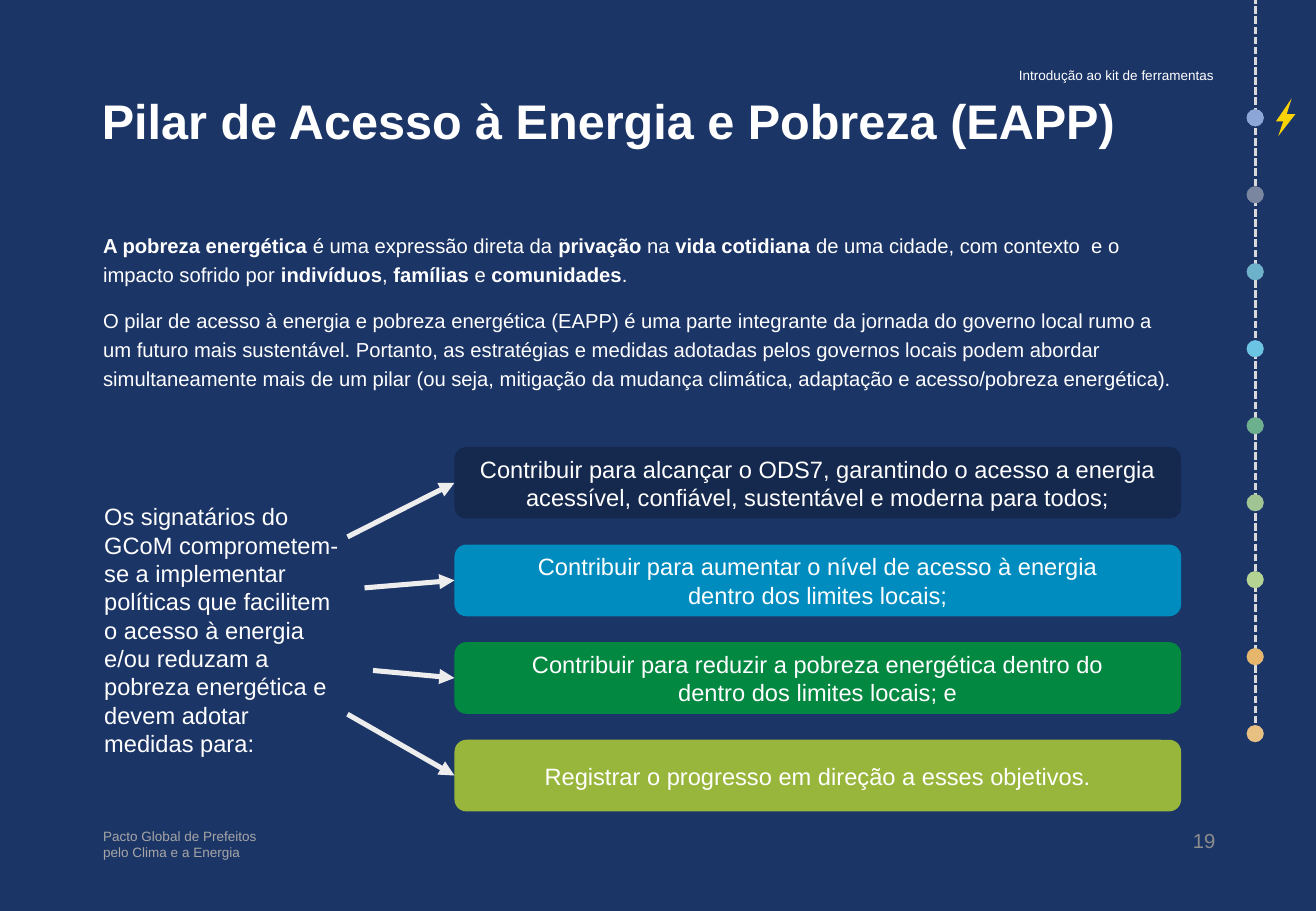
from copy import deepcopy

from pptx import Presentation
from pptx.dml.color import RGBColor
from pptx.enum.dml import MSO_LINE_DASH_STYLE as Dash
from pptx.enum.shapes import MSO_CONNECTOR_TYPE as Connector, MSO_SHAPE as Shape
from pptx.enum.text import MSO_VERTICAL_ANCHOR as Anchor, PP_PARAGRAPH_ALIGNMENT as Align
from pptx.oxml.xmlchemy import OxmlElement
from pptx.util import Inches, Pt

NAVY = RGBColor(0x1C, 0x35, 0x67)
DARK_NAVY = RGBColor(0x15, 0x28, 0x4D)
BLUE = RGBColor(0x00, 0x8C, 0xBE)
GREEN = RGBColor(0x03, 0x88, 0x42)
OLIVE = RGBColor(0x99, 0xB6, 0x3C)
WHITE = RGBColor(0xFF, 0xFF, 0xFF)
ARROW_GRAY = RGBColor(0xED, 0xED, 0xED)
TRACK_GRAY = RGBColor(0xD9, 0xD9, 0xD9)
FOOTER_GRAY = RGBColor(0xA6, 0xA6, 0xA6)
NUMBER_GRAY = RGBColor(0x8C, 0x8C, 0x8C)
YELLOW = RGBColor(0xFA, 0xD3, 0x07)
PALE_BLUE = RGBColor(0xC3, 0xD2, 0xEF)
MID_BLUE = RGBColor(0x4C, 0x78, 0xCE)
SKY = RGBColor(0x00, 0xB0, 0xF0)
LEAF = RGBColor(0x6A, 0xB2, 0x4D)
LIME = RGBColor(0x92, 0xD0, 0x50)
ORANGE = RGBColor(0xF1, 0x95, 0x00)
AMBER = RGBColor(0xF8, 0xA9, 0x2A)

DOT_COLORS = [MID_BLUE, NAVY, BLUE, SKY, GREEN, LEAF, LIME, ORANGE, AMBER]
DOT_TOP, DOT_SIZE = 0.9, 0.14
DOT_STEP = (5.97 - DOT_TOP) / (len(DOT_COLORS) - 1)

INTRO = [
    "*A pobreza energética *é uma expressão direta da *privação *na *vida cotidiana *"
    "de uma cidade, com contexto  e o impacto sofrido por *indivíduos*, *famílias *e "
    "*comunidades*.",
    "O pilar de acesso à energia e pobreza energética (EAPP) é uma parte integrante da "
    "jornada do governo local rumo a um futuro mais sustentável. Portanto, as estratégias "
    "e medidas adotadas pelos governos locais podem abordar simultaneamente mais de um "
    "pilar (ou seja, mitigação da mudança climática, adaptação e acesso/pobreza energética).",
]
COMMITMENT = (
    "Os signatários do GCoM comprometem-se a implementar políticas que facilitem o acesso "
    "à energia e/ou reduzam a pobreza energética e devem adotar medidas para:"
)
MEASURES = [
    (DARK_NAVY, (2.86, 4.42), "Contribuir para alcançar o ODS7, garantindo o acesso a energia "
     "acessível, confiável, sustentável e moderna para todos;"),
    (BLUE, (3, 4.84), "Contribuir para aumentar o nível de acesso à energia\n"
     "dentro dos limites locais;"),
    (GREEN, (3.07, 5.52), "Contribuir para reduzir a pobreza energética dentro do\n"
     "dentro dos limites locais; e"),
    (OLIVE, (2.86, 5.88), "Registrar o progresso em direção a esses objetivos."),
]
BAR_LEFT, BAR_TOP, BAR_WIDTH, BAR_HEIGHT = 3.74, 3.68, 5.98, 0.59
BAR_STEP = (6.09 - BAR_TOP) / (len(MEASURES) - 1)

BOLT = [
    [(10.57, 1), (10.5, 1), (10.63, 0.81), (10.58, 0.97)],
    [(10.58, 0.94), (10.66, 0.94), (10.52, 1.12), (10.57, 0.97)],
]


def apply(target, values):
    for name, value in values.items():
        setattr(target, name, value)


class Painter:
    font_name = "Arial"

    def __init__(self, page):
        self.page = page

    def fill_text(self, box, paragraphs, size, color=WHITE, bold=False, anchor=Anchor.TOP,
                  **format):
        frame = box.text_frame
        apply(frame, {"word_wrap": True, "vertical_anchor": anchor})
        for index, text in enumerate(paragraphs):
            para = frame.add_paragraph() if index else frame.paragraphs[0]
            apply(para, {"alignment": Align.LEFT, **format})
            if index:
                para.space_before = Pt(10)
            for part, piece in enumerate(text.split("*")):
                if piece:
                    self.add_spans(para, piece, size, color, bold or part % 2 == 1)

    def add_spans(self, para, piece, size, color, bold):
        for number, line in enumerate(piece.split("\n")):
            if number:
                para.add_line_break()
                para._p[-1].append(deepcopy(span._r.rPr))
            span = para.add_run()
            span.text = line
            apply(span.font, {"name": self.font_name, "size": Pt(size), "bold": bold})
            span.font.color.rgb = color

    def text(self, place, paragraphs, size, **format):
        box = self.page.shapes.add_textbox(*map(Inches, place))
        self.fill_text(box, paragraphs, size, **format)

    def paint(self, shape, fill):
        shape.shadow.inherit = False
        shape.line.fill.background()
        if fill is None:
            shape.fill.background()
        else:
            shape.fill.solid()
            shape.fill.fore_color.rgb = fill

    def shape(self, kind, place, fill=None, opacity=None):
        shape = self.page.shapes.add_shape(kind, *map(Inches, place))
        self.paint(shape, fill)
        if opacity is not None:
            alpha = OxmlElement("a:alpha")
            alpha.set("val", str(opacity * 1000))
            shape._element.spPr.find(".//{*}srgbClr").append(alpha)
        return shape

    def dot(self, index, fill, opacity=None):
        place = (10.26, DOT_TOP + index * DOT_STEP, DOT_SIZE, DOT_SIZE)
        self.shape(Shape.OVAL, place, fill, opacity)

    def outline(self, points, fill):
        corners = [tuple(map(Inches, point)) for point in points]
        builder = self.page.shapes.build_freeform(*corners[0])
        builder.add_line_segments(corners[1:], close=True)
        self.paint(builder.convert_to_shape(), fill)

    def line(self, start, end, color, width, dash=None, arrow=False):
        line = self.page.shapes.add_connector(
            Connector.STRAIGHT, *map(Inches, (*start, *end)))
        line.line.color.rgb = color
        apply(line.line, {"width": Pt(width), "dash_style": dash})
        if arrow:
            tail = OxmlElement("a:tailEnd")
            tail.set("type", "triangle")
            line._element.spPr.find("{*}ln").append(tail)
        line._element.spPr.append(OxmlElement("a:effectLst"))


def main():
    deck = Presentation()
    apply(deck, {"slide_width": Inches(10.83), "slide_height": Inches(7.5)})
    page = deck.slides.add_slide(deck.slide_layouts[6])
    page.background.fill.solid()
    page.background.fill.fore_color.rgb = NAVY
    painter = Painter(page)

    painter.text((0.75, 6.77, 1.83, 0.4), ["Pacto Global de Prefeitos\npelo Clima e a Energia"],
                 8, color=FOOTER_GRAY)
    painter.line((10.33, 6.04), (10.33, 0), TRACK_GRAY, 1.5, dash=Dash.SQUARE_DOT)
    for index in range(len(DOT_COLORS)):
        painter.dot(index, TRACK_GRAY)

    painter.text((0.75, 1.83, 9.05, 2.11), INTRO, 12, line_spacing=1.2)
    painter.text((0.74, 0.75, 8.67, 0.7), ["Pilar de Acesso à Energia e Pobreza (EAPP)"],
                 28.8, bold=True, line_spacing=0.9)
    painter.text((6.67, 0.5, 3.42, 0.24), ["Introdução ao kit de ferramentas"], 8,
                 anchor=Anchor.BOTTOM, alignment=Align.RIGHT, line_spacing=0.9)

    commitment = painter.shape(Shape.ROUNDED_RECTANGLE, (0.74, 3.69, 2.18, 2.99))
    commitment.adjustments[0] = 0.03
    painter.fill_text(commitment, [COMMITMENT], 14, anchor=Anchor.MIDDLE)

    for index, (fill, arrow_start, text) in enumerate(MEASURES):
        top = BAR_TOP + index * BAR_STEP
        bar = painter.shape(Shape.ROUNDED_RECTANGLE, (BAR_LEFT, top, BAR_WIDTH, BAR_HEIGHT), fill)
        painter.fill_text(bar, [text], 14, anchor=Anchor.MIDDLE, alignment=Align.CENTER)
        painter.line(arrow_start, (BAR_LEFT, top + BAR_HEIGHT / 2), ARROW_GRAY, 3, arrow=True)

    painter.text((9.58, 6.77, 0.52, 0.4), ["19"], 12, color=NUMBER_GRAY, alignment=Align.RIGHT)

    for points in BOLT:
        painter.outline(points, YELLOW)
    painter.dot(0, PALE_BLUE, 50)
    for index, color in enumerate(DOT_COLORS):
        painter.dot(index, color, 50)

    deck.save("out.pptx")


if __name__ == "__main__":
    main()
